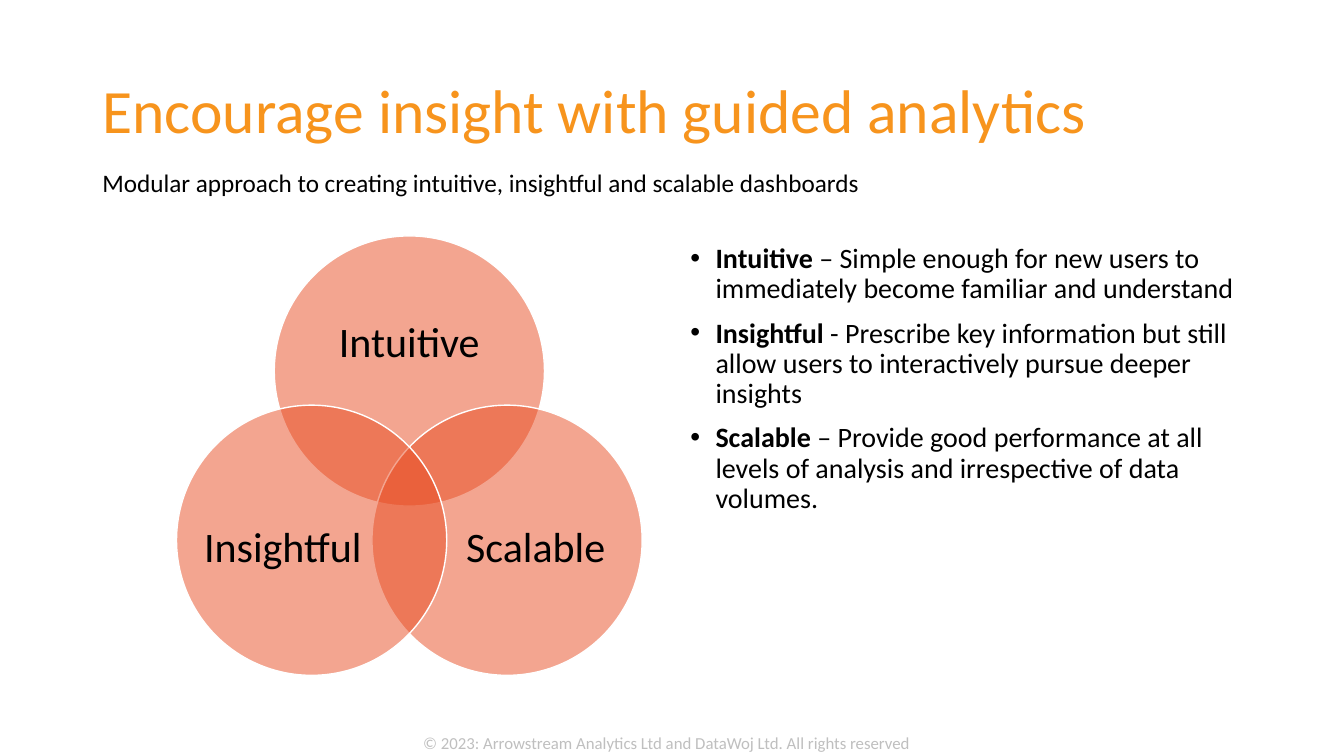
from dataclasses import dataclass
from math import cos, radians, sin

from lxml import etree
from pptx import Presentation
from pptx.dml.color import RGBColor
from pptx.enum.shapes import MSO_SHAPE
from pptx.enum.text import MSO_ANCHOR, PP_ALIGN
from pptx.oxml.ns import qn
from pptx.util import Pt

OVAL = MSO_SHAPE.OVAL
MIDDLE = MSO_ANCHOR.MIDDLE
LEFT, CENTER = PP_ALIGN.LEFT, PP_ALIGN.CENTER


@dataclass(frozen=True)
class Theme:
    font: str = "Calibri"
    title_color: RGBColor = RGBColor(0xF7, 0x94, 0x1D)
    text_color: RGBColor = RGBColor(0, 0, 0)
    footer_color: RGBColor = RGBColor(0xBF, 0xBF, 0xBF)
    circle_fill: RGBColor = RGBColor(0xE8, 0x4C, 0x22)
    circle_line: RGBColor = RGBColor(0xFF, 0xFF, 0xFF)
    circle_opacity: int = 50
    title_size: int = 44
    label_size: int = 30
    body_size: int = 20
    subtitle_size: int = 18
    footer_size: int = 12
    line_spacing: float = 0.9


THEME = Theme()

VENN_CENTER = (292.4, 345.6)
VENN_ORBIT = 80.6
VENN_DIAMETER = 193
VENN_PARTS = [
    ("Intuitive", 0, (0, -19), (142, 87)),
    ("Scalable", 120, (20.5, 6.5), (116, 106.6)),
    ("Insightful", 240, (-20.5, 6.5), (116, 106.6)),
]

BENEFITS = [
    ("Intuitive", " – Simple enough for new users to immediately become familiar and understand"),
    ("Insightful", " - Prescribe key information but still allow users to interactively pursue deeper insights"),
    ("Scalable", " – Provide good performance at all levels of analysis and irrespective of data volumes."),
]


def style_paragraph(paragraph, size, color, alignment=LEFT):
    paragraph.alignment = alignment
    paragraph.font.name = THEME.font
    paragraph.font.size = Pt(size)
    paragraph.font.color.rgb = color


def add_text(slide, box, text, size, color, alignment=LEFT, wrap=True):
    shape = slide.shapes.add_textbox(*map(Pt, box))
    frame = shape.text_frame
    frame.word_wrap = wrap
    frame.text = text
    style_paragraph(frame.paragraphs[0], size, color, alignment)
    return frame


def set_title(slide, box, text):
    title = slide.shapes.title
    title.left, title.top, title.width, title.height = map(Pt, box)
    title.text_frame.text = text
    title.text_frame.vertical_anchor = MIDDLE
    paragraph = title.text_frame.paragraphs[0]
    paragraph.line_spacing = THEME.line_spacing
    style_paragraph(paragraph, THEME.title_size, THEME.title_color)


def add_bullet(paragraph, indent):
    properties = paragraph._p.get_or_add_pPr()
    properties.set("marL", str(Pt(indent)))
    properties.set("indent", str(-Pt(indent)))
    etree.SubElement(properties, qn("a:buFont")).set("typeface", "Arial")
    etree.SubElement(properties, qn("a:buChar")).set("char", "•")


def add_benefits(slide, box):
    frame = slide.shapes.add_textbox(*map(Pt, box)).text_frame
    frame.word_wrap = True
    for index, (name, description) in enumerate(BENEFITS):
        paragraph = frame.add_paragraph() if index else frame.paragraphs[0]
        add_bullet(paragraph, 18)
        style_paragraph(paragraph, THEME.body_size, THEME.text_color)
        paragraph.line_spacing = THEME.line_spacing
        paragraph.space_before = Pt(10 if index else 0)
        name_run = paragraph.add_run()
        name_run.text = name
        name_run.font.bold = True
        paragraph.add_run().text = description


def centered_box(x, y, width, height):
    return x - width / 2, y - height / 2, width, height


def add_circle(slide, x, y):
    box = centered_box(x, y, VENN_DIAMETER, VENN_DIAMETER)
    circle = slide.shapes.add_shape(OVAL, *map(Pt, box))
    circle.shadow.inherit = False
    circle.fill.solid()
    circle.fill.fore_color.rgb = THEME.circle_fill
    color = circle.fill._xPr.find(qn("a:solidFill"))[0]
    etree.SubElement(color, qn("a:alpha")).set("val", str(THEME.circle_opacity * 1000))
    circle.line.color.rgb = THEME.circle_line
    circle.line.width = Pt(1)


def add_label(slide, x, y, size, text):
    frame = add_text(slide, centered_box(x, y, *size), text,
                     THEME.label_size, THEME.text_color, CENTER)
    frame.vertical_anchor = MIDDLE
    frame.margin_left = frame.margin_right = frame.margin_top = frame.margin_bottom = 0
    frame.paragraphs[0].line_spacing = THEME.line_spacing


def add_venn(slide):
    for text, angle, (shift_x, shift_y), size in VENN_PARTS:
        x = VENN_CENTER[0] + VENN_ORBIT * sin(radians(angle))
        y = VENN_CENTER[1] - VENN_ORBIT * cos(radians(angle))
        add_circle(slide, x, y)
        add_label(slide, x + shift_x, y + shift_y, size, text)


def main():
    presentation = Presentation()
    presentation.slide_width, presentation.slide_height = Pt(960), Pt(540)
    slide = presentation.slides.add_slide(presentation.slide_layouts[5])
    set_title(slide, (66, 28.8, 828, 104.4), "Encourage insight with guided analytics")
    add_benefits(slide, (486, 171, 408, 330))
    add_text(slide, (66, 116, 648, 29),
             "Modular approach to creating intuitive, insightful and scalable dashboards",
             THEME.subtitle_size, THEME.text_color)
    add_venn(slide)
    add_text(slide, (295.2, 519.8, 369.4, 20),
             "© 2023: Arrowstream Analytics Ltd and DataWoj Ltd. All rights reserved",
             THEME.footer_size, THEME.footer_color, wrap=False)
    presentation.save("out.pptx")


if __name__ == "__main__":
    main()
